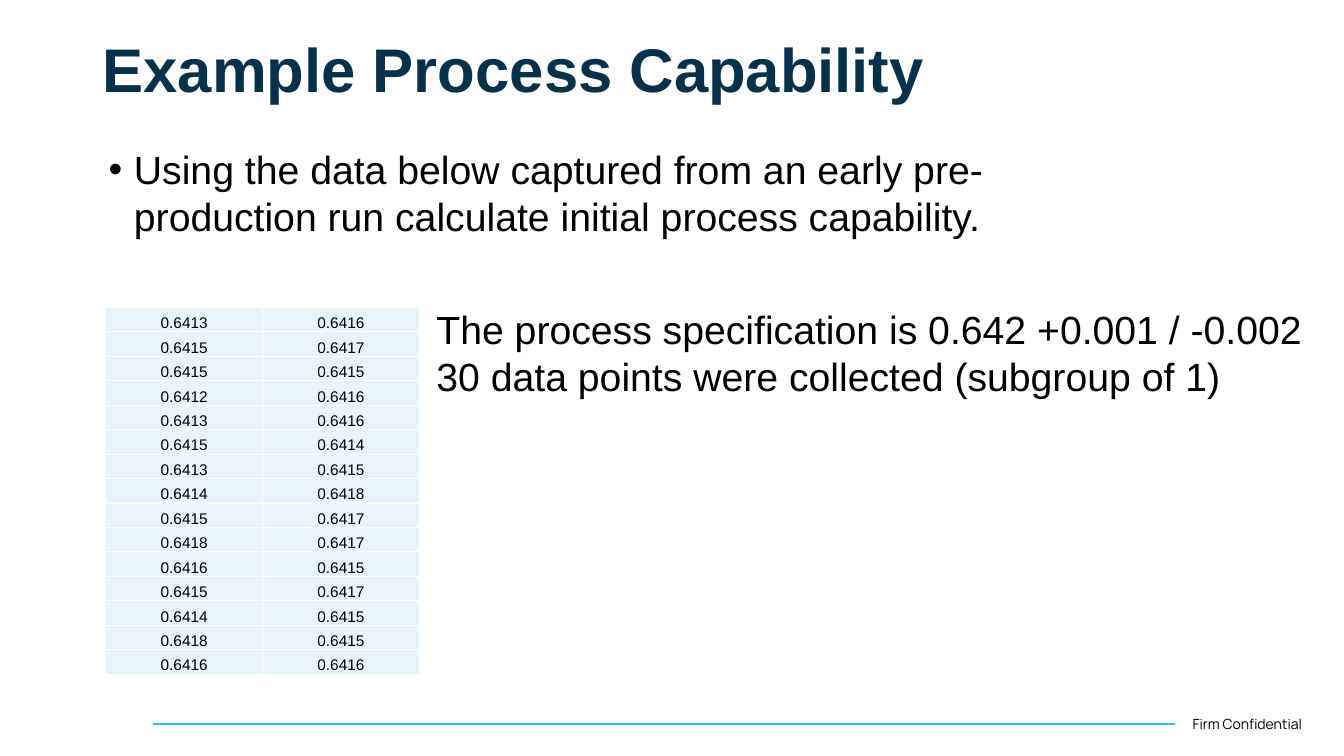
from lxml import etree
from pptx import Presentation
from pptx.dml.color import RGBColor
from pptx.enum.shapes import MSO_CONNECTOR
from pptx.enum.text import MSO_ANCHOR, MSO_AUTO_SIZE, PP_ALIGN
from pptx.oxml import parse_xml
from pptx.oxml.ns import nsdecls, qn
from pptx.util import Inches, Pt


def color(value):
    return RGBColor.from_string(value)


def add_text(area, lines, size, font="Arial", ink="000000", wrap=True):
    box = page.shapes.add_textbox(*[Inches(length) for length in area])
    frame = box.text_frame
    frame.word_wrap = wrap
    frame.text = "\n".join(lines)
    for para in frame.paragraphs:
        para.font.size = Pt(size)
        para.font.name = font
        para.font.color.rgb = color(ink)
    return frame


deck = Presentation()
deck.slide_width = Inches(13.33)
deck.slide_height = Inches(7.5)
page = deck.slides.add_slide(deck.slide_layouts[6])

footer_line = page.shapes.add_connector(
    MSO_CONNECTOR.STRAIGHT, Inches(1.52), Inches(7.18), Inches(11.65), Inches(7.18)
)
footer_line.line.color.rgb = color("30BFEF")
footer_line.line.width = Pt(1.5)
etree.SubElement(footer_line._element.spPr, qn("a:effectLst"))

footer = add_text((11.73, 7.05, 1.48, 0.27), ["Firm Confidential"], 10, "Manrope")
footer.auto_size = MSO_AUTO_SIZE.SHAPE_TO_FIT_TEXT

title = add_text((0.92, 0.28, 11.5, 0.88), ["Example Process Capability"], 44, ink="05314A")
title.vertical_anchor = MSO_ANCHOR.MIDDLE
title.paragraphs[0].line_spacing = 0.9
title.paragraphs[0].font.bold = True

task = add_text((0.98, 1.39, 9.08, 3.33), [
    "Using the data below captured from an early pre-production run "
    "calculate initial process capability.",
], 28)
bullet_format = task.paragraphs[0]._p.get_or_add_pPr()
bullet_format.set("marL", str(Inches(0.25)))
bullet_format.set("indent", str(Inches(-0.25)))
bullet_format.insert(0, parse_xml(f'<a:buFont {nsdecls("a")} typeface="Arial"/>'))
bullet_format.insert(1, parse_xml(f'<a:buChar {nsdecls("a")} char="•"/>'))

measurements = [
    ("0.6413", "0.6416"),
    ("0.6415", "0.6417"),
    ("0.6415", "0.6415"),
    ("0.6412", "0.6416"),
    ("0.6413", "0.6416"),
    ("0.6415", "0.6414"),
    ("0.6413", "0.6415"),
    ("0.6414", "0.6418"),
    ("0.6415", "0.6417"),
    ("0.6418", "0.6417"),
    ("0.6416", "0.6415"),
    ("0.6415", "0.6417"),
    ("0.6414", "0.6415"),
    ("0.6418", "0.6415"),
    ("0.6416", "0.6416"),
]
table = page.shapes.add_table(
    len(measurements), 2, Inches(1.05), Inches(3.05), Inches(3.11), Inches(3.64)
).table
table.first_row = False
table.horz_banding = False
for row, values in enumerate(measurements):
    for column, value in enumerate(values):
        cell = table.cell(row, column)
        cell.text = value
        cell.vertical_anchor = MSO_ANCHOR.BOTTOM
        cell.margin_left = cell.margin_right = cell.margin_top = Inches(0.01)
        cell.margin_bottom = 0
        cell.fill.solid()
        cell.fill.fore_color.rgb = color("E7F4FC")
        para = cell.text_frame.paragraphs[0]
        para.alignment = PP_ALIGN.CENTER
        para.font.size = Pt(11)
        para.font.name = "Arial"
        para.font.color.rgb = color("000000")
        for order, side in enumerate(("lnL", "lnR", "lnT", "lnB")):
            cell._tc.get_or_add_tcPr().insert(order, parse_xml(
                f'<a:{side} {nsdecls("a")} w="{Pt(1)}"><a:solidFill>'
                f'<a:srgbClr val="FFFFFF"/></a:solidFill></a:{side}>'
            ))

specification = add_text((4.23, 2.98, 8.89, 1.04), [
    "The process specification is 0.642 +0.001 / -0.002",
    "30 data points were collected (subgroup of 1)",
], 28, wrap=False)
specification.auto_size = MSO_AUTO_SIZE.SHAPE_TO_FIT_TEXT

deck.save("out.pptx")
